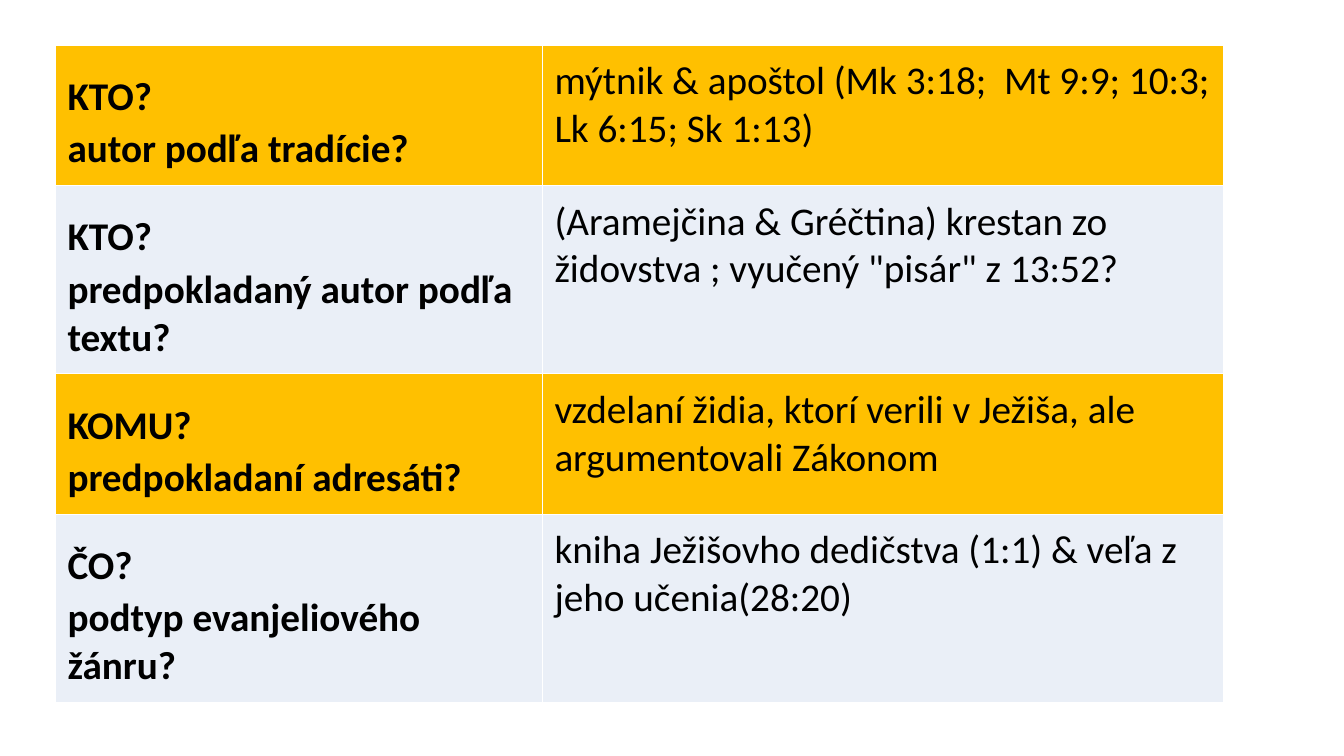
from lxml import etree
from pptx import Presentation
from pptx.dml.color import RGBColor
from pptx.oxml.ns import qn
from pptx.util import Inches, Pt

FONT = "Calibri"
BLACK, WHITE = "000000", "FFFFFF"
BAND_FILLS = ("FFC000", "EAEFF7")
COLUMN_WIDTHS = (4.83, 6.76)
ROW_HEIGHT = 0.81
CELL_MARGIN = 0.12
GOSPEL_ROWS = [
    ("KTO? ", "autor podľa tradície?",
     "mýtnik & apoštol (Mk 3:18;  Mt 9:9; 10:3; Lk 6:15; Sk 1:13)"),
    ("KTO? ", "predpokladaný autor podľa textu?",
     '(Aramejčina & Gréčtina) krestan zo židovstva ; vyučený "pisár" z 13:52?'),
    ("KOMU?", "predpokladaní adresáti?",
     "vzdelaní židia, ktorí verili v Ježiša, ale argumentovali Zákonom"),
    ("ČO?", "podtyp evanjeliového žánru?",
     "kniha Ježišovho dedičstva (1:1) & veľa z jeho učenia(28:20)"),
]


def color(hex_value):
    """Return the colour for a hex string."""
    return RGBColor.from_string(hex_value)


def add_text(paragraph, text, size=28, bold=False, hex_value=BLACK):
    """Append a formatted run to a paragraph."""
    run = paragraph.add_run()
    run.text = text
    run.font.name = FONT
    run.font.size = Pt(size)
    run.font.bold = bold
    run.font.color.rgb = color(hex_value)


def add_borders(cell, hex_value=WHITE, width=1):
    """Draw a solid line on all four sides of a cell."""
    properties = cell._tc.get_or_add_tcPr()
    for position, side in enumerate(("lnL", "lnR", "lnT", "lnB")):
        line = etree.Element(qn(f"a:{side}"), w=str(Pt(width)))
        fill = etree.SubElement(line, qn("a:solidFill"))
        etree.SubElement(fill, qn("a:srgbClr"), val=hex_value)
        properties.insert(position, line)


def format_cell(cell, fill):
    """Set the fill, margins and borders of a cell."""
    cell.fill.solid()
    cell.fill.fore_color.rgb = color(fill)
    cell.margin_left = cell.margin_right = Inches(CELL_MARGIN)
    cell.margin_top = cell.margin_bottom = Inches(CELL_MARGIN)
    add_borders(cell)


def add_gospel_table(slide, left, top, width, height):
    """Place the table of questions and answers in the given box."""
    shape = slide.shapes.add_table(
        len(GOSPEL_ROWS), len(COLUMN_WIDTHS),
        Inches(left), Inches(top), Inches(width), Inches(height))
    table = shape.table
    table.first_row = False
    table.horz_banding = False
    for column, share in zip(table.columns, COLUMN_WIDTHS):
        column.width = Inches(width * share / sum(COLUMN_WIDTHS))
    for index, (heading, question, answer) in enumerate(GOSPEL_ROWS):
        table.rows[index].height = Inches(ROW_HEIGHT)
        question_cell, answer_cell = table.rows[index].cells
        for cell in (question_cell, answer_cell):
            format_cell(cell, BAND_FILLS[index % len(BAND_FILLS)])
        paragraph = question_cell.text_frame.paragraphs[0]
        add_text(paragraph, heading, bold=True)
        add_text(paragraph, " ", size=40, bold=True)
        paragraph.add_line_break()
        add_text(paragraph, question, bold=True)
        add_text(answer_cell.text_frame.paragraphs[0], answer)
    shape.height = Inches(height)


def main():
    """Build the slide and save the presentation."""
    presentation = Presentation()
    presentation.slide_width = Inches(13.33)
    presentation.slide_height = Inches(7.5)
    slide = presentation.slides.add_slide(presentation.slide_layouts[6])
    add_gospel_table(slide, 0.55, 0.45, 11.59, 6.41)
    presentation.save("out.pptx")


if __name__ == "__main__":
    main()
